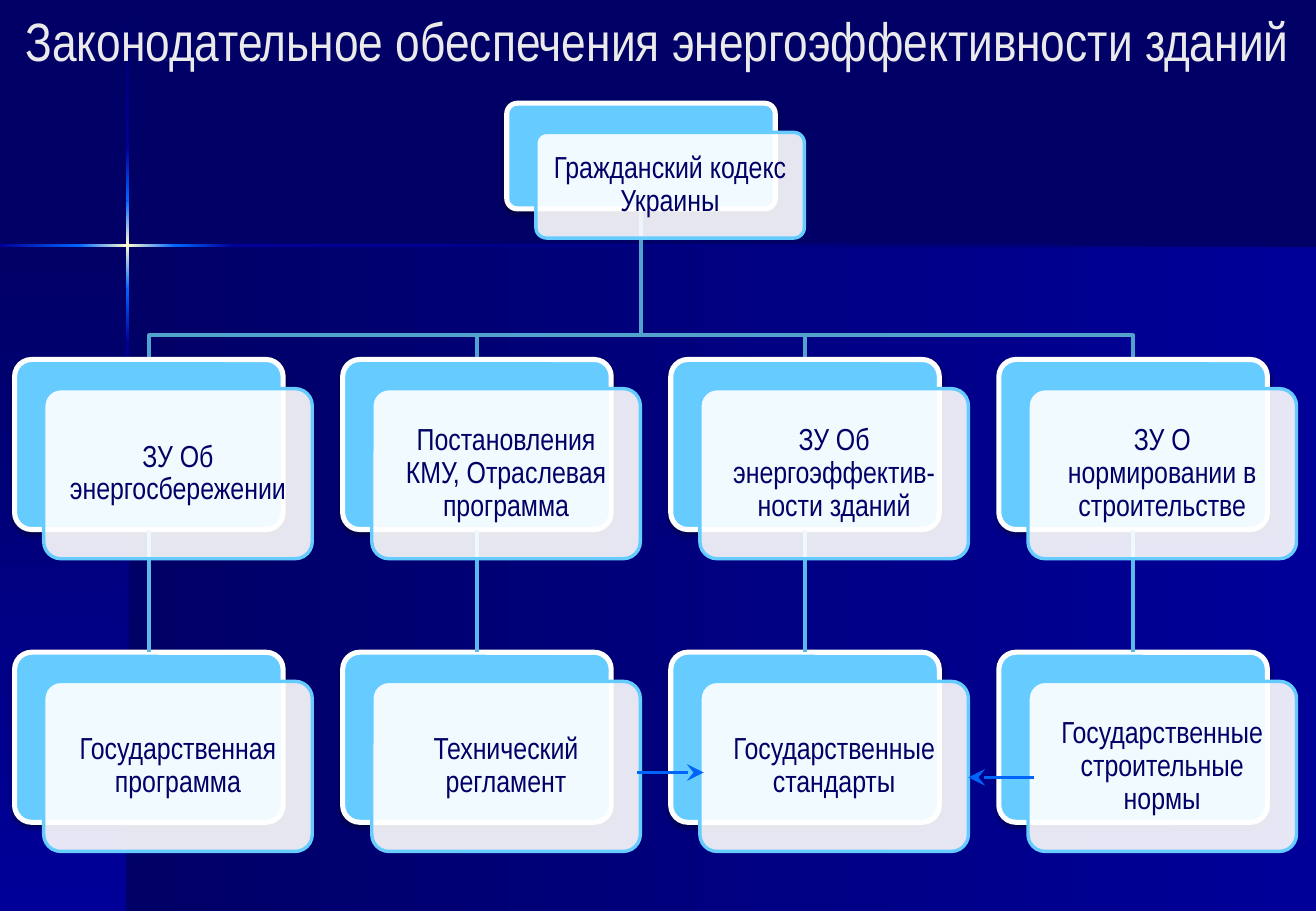
from lxml.etree import SubElement
from pptx import Presentation
from pptx.dml.color import RGBColor
from pptx.enum.shapes import MSO_CONNECTOR, MSO_SHAPE
from pptx.enum.text import MSO_ANCHOR, PP_ALIGN
from pptx.oxml.ns import qn
from pptx.util import Inches, Pt


def color(value):
    return RGBColor.from_string(value)


def add_element(parent, tag, **attributes):
    return SubElement(parent, qn(tag), {name: str(value) for name, value in attributes.items()})


presentation = Presentation()
presentation.slide_width = Inches(10.83)
presentation.slide_height = Inches(7.5)
slide = presentation.slides.add_slide(presentation.slide_layouts[6])
shapes = slide.shapes
slide.background.fill.solid()
slide.background.fill.fore_color.rgb = color("000066")

NAVY, BLUE, BRIGHT, GLOW = "000066", "000099", "0066FF", "FFFFCC"
backdrop = [
    (1.05, 2.02, 9.78, 5.48, 0, [NAVY, BLUE]),
    (0, 2.02, 1.05, 5.48, 90, [NAVY, BLUE]),
    (1.04, 0, 0.02, 1.21, 90, [NAVY, BLUE]),
    (1.04, 2.82, 0.02, 4.68, 90, [BLUE, NAVY]),
    (1.92, 2.01, 8.91, 0.02, 0, [BLUE, NAVY]),
    (1.04, 2.38, 0.02, 0.44, 90, [BRIGHT, BLUE]),
    (1.04, 1.21, 0.02, 0.44, 90, [BLUE, BRIGHT]),
    (1.04, 1.65, 0.02, 0.73, 90, [BRIGHT, GLOW, BRIGHT]),
    (0, 2.01, 0.66, 0.02, 0, [BLUE, BRIGHT]),
    (1.44, 2.01, 0.48, 0.02, 0, [BRIGHT, BLUE]),
    (0.65, 2.01, 0.79, 0.02, 0, [BRIGHT, GLOW, BRIGHT]),
]
for left, top, width, height, angle, stops in backdrop:
    panel = shapes.add_shape(
        MSO_SHAPE.RECTANGLE, Inches(left), Inches(top), Inches(width), Inches(height))
    panel.shadow.inherit = False
    panel.line.fill.background()
    panel.fill.gradient()
    panel.fill.gradient_angle = -angle % 360
    stop_list = panel.fill._fill._gradFill.find(qn("a:gsLst"))
    for old_stop in list(stop_list):
        stop_list.remove(old_stop)
    for index, value in enumerate(stops):
        stop = add_element(stop_list, "a:gs", pos=100000 * index // (len(stops) - 1))
        add_element(stop, "a:srgbClr", val=value)

title = shapes.add_textbox(Inches(0.11), Inches(0.08), Inches(10.72), Inches(0.5))
title.text_frame.word_wrap = True
title.text_frame.vertical_anchor = MSO_ANCHOR.MIDDLE
run = title.text_frame.paragraphs[0].add_run()
run.text = "Законодательное обеспечения энергоэффективности зданий"
run.font.name = "Arial Narrow"
run.font.size = Pt(32)
run.font.color.rgb = color("EAEAEA")

BOX_WIDTH, BOX_HEIGHT, OFFSET = 2.21, 1.4, 0.24
ROOT_LEFT, ROOT_TOP, ROOT_HEIGHT = 4.17, 0.85, 0.87
LAW_TOP, DOCUMENT_TOP = 2.96, 5.37
columns = [0.12 + 2.7 * index for index in range(4)]
laws = [
    "ЗУ Об энергосбережении",
    "Постановления КМУ, Отраслевая программа",
    "ЗУ Об энергоэффектив-ности зданий",
    "ЗУ О нормировании в строительстве",
]
documents = [
    "Государственная программа",
    "Технический регламент",
    "Государственные стандарты",
    "Государственные строительные нормы",
]
nodes = [(ROOT_LEFT, ROOT_TOP, ROOT_HEIGHT, "Гражданский кодекс Украины")]
for top, labels in ((LAW_TOP, laws), (DOCUMENT_TOP, documents)):
    nodes += [(left, top, BOX_HEIGHT, label) for left, label in zip(columns, labels)]

root_center = ROOT_LEFT + BOX_WIDTH / 2
for left in columns:
    center = left + BOX_WIDTH / 2
    builder = shapes.build_freeform(
        Inches(root_center), Inches(ROOT_TOP + ROOT_HEIGHT), scale=1.0)
    builder.add_line_segments(
        [(Inches(x), Inches(y)) for x, y in
         ((root_center, 2.76), (center, 2.76), (center, LAW_TOP))], close=False)
    branch = builder.convert_to_shape()
    branch.shadow.inherit = False
    branch.fill.background()
    branch.line.color.rgb = color("52A3CC")
    branch.line.width = Pt(2)

plates = []
for left, top, height, label in nodes:
    plate = shapes.add_shape(
        MSO_SHAPE.ROUNDED_RECTANGLE, Inches(left), Inches(top), Inches(BOX_WIDTH), Inches(height))
    plate.adjustments[0] = 0.1
    plate.fill.solid()
    plate.fill.fore_color.rgb = color("66CCFF")
    plate.line.color.rgb = color("FFFFFF")
    plate.line.width = Pt(3)
    plate.shadow.inherit = False
    effects = plate._element.spPr.find(qn("a:effectLst"))
    shadow = add_element(effects, "a:outerShdw", blurRad=Pt(3.1), dist=Pt(1.6),
                         dir=5400000, rotWithShape=0)
    add_element(add_element(shadow, "a:srgbClr", val="000000"), "a:alpha", val=38000)
    plates.append(plate)

for law_plate, document_plate in zip(plates[1:5], plates[5:]):
    link = shapes.add_connector(MSO_CONNECTOR.STRAIGHT, 0, 0, 0, 0)
    link.begin_connect(law_plate, 2)
    link.end_connect(document_plate, 0)
    link.line.color.rgb = color("5DB9E7")
    link.line.width = Pt(2)
    add_element(link._element.spPr, "a:effectLst")

for left, top, height, label in nodes:
    card = shapes.add_shape(
        MSO_SHAPE.ROUNDED_RECTANGLE, Inches(left + OFFSET), Inches(top + OFFSET),
        Inches(BOX_WIDTH), Inches(height))
    card.adjustments[0] = 0.1
    card.shadow.inherit = False
    card.fill.solid()
    card.fill.fore_color.rgb = color("FFFFFF")
    fill_color = card._element.spPr.find(qn("a:solidFill")).find(qn("a:srgbClr"))
    add_element(fill_color, "a:alpha", val=90000)
    card.line.color.rgb = color("66CCFF")
    card.line.width = Pt(2)
    frame = card.text_frame
    frame.word_wrap = True
    frame.vertical_anchor = MSO_ANCHOR.MIDDLE
    frame.margin_left = frame.margin_right = Inches(0.11)
    frame.margin_top = frame.margin_bottom = Inches(0.07)
    paragraph = frame.paragraphs[0]
    paragraph.alignment = PP_ALIGN.CENTER
    paragraph.line_spacing = 0.9
    paragraph.space_after = Pt(6)
    run = paragraph.add_run()
    run.text = label
    run.font.name = "Arial Narrow"
    run.font.size = Pt(18)
    run.font.color.rgb = color(NAVY)

for start, end, y in ((5.24, 5.79, 6.36), (8.51, 7.97, 6.4)):
    arrow = shapes.add_connector(
        MSO_CONNECTOR.STRAIGHT, Inches(start), Inches(y), Inches(end), Inches(y))
    arrow.line.color.rgb = color("0064F9")
    arrow.line.width = Pt(1.5)
    add_element(arrow.line._get_or_add_ln(), "a:tailEnd", type="stealth", w="lg", len="lg")
    add_element(arrow._element.spPr, "a:effectLst")

presentation.save("out.pptx")
